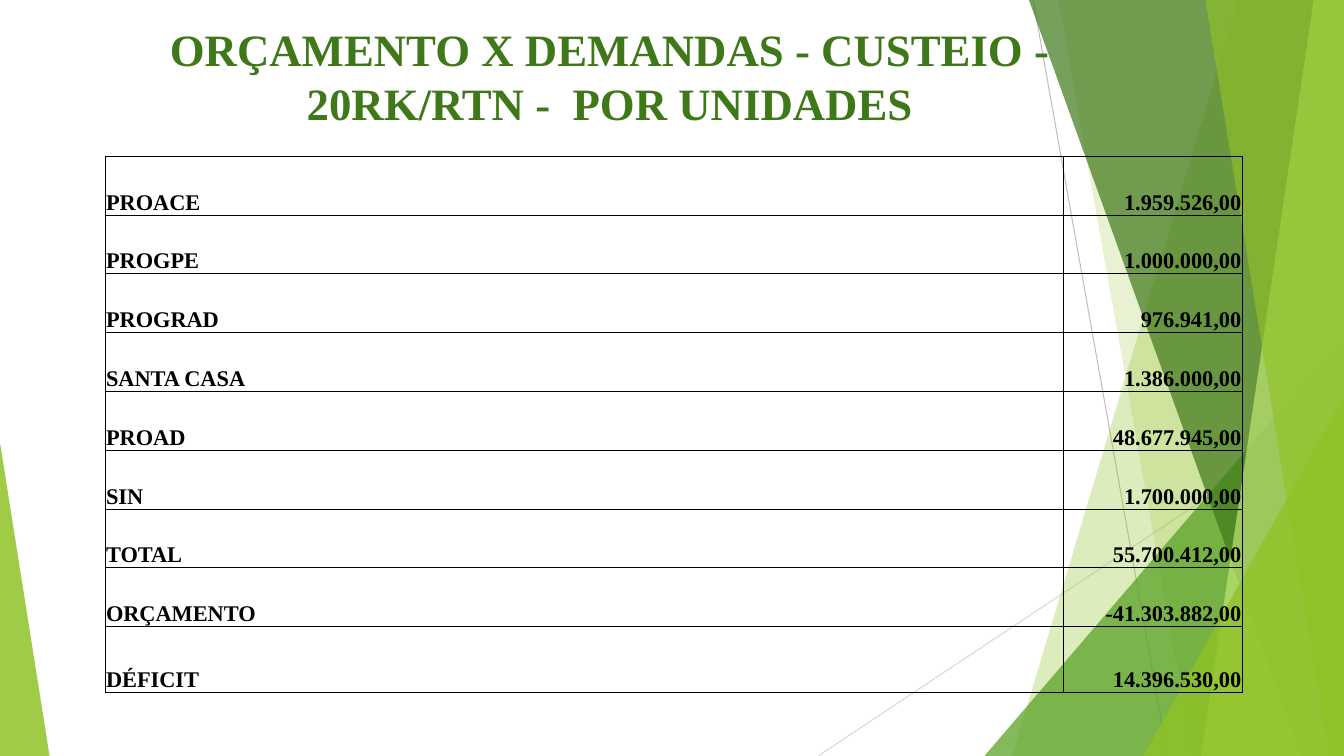
from dataclasses import dataclass
from typing import Any

from lxml.etree import SubElement
from pptx import Presentation
from pptx.dml.color import RGBColor
from pptx.enum.shapes import MSO_CONNECTOR, MSO_SHAPE
from pptx.enum.text import MSO_ANCHOR, PP_ALIGN
from pptx.oxml import parse_xml
from pptx.oxml.ns import nsdecls, qn
from pptx.util import Emu, Pt

COLS, ROWS = 160, 90
CELL = 76200

LIME = RGBColor(0x90, 0xC2, 0x26)
LEAF = RGBColor(0x54, 0xA0, 0x21)
PINE = RGBColor(0x3F, 0x78, 0x19)
PALE = RGBColor(0xC0, 0xE4, 0x74)
GREY = RGBColor(0xBF, 0xBF, 0xBF)
MIST = RGBColor(0xD9, 0xD9, 0xD9)
BLACK = RGBColor(0, 0, 0)

FACE = {"name": "Times New Roman", "bold": True}
TITLE = FACE | {"size": Pt(32)}
BODY = FACE | {"size": Pt(16)}
INSET = {
    "margin_left": Emu(9525),
    "margin_right": Emu(9525),
    "margin_top": Emu(9525),
    "margin_bottom": Emu(0),
    "vertical_anchor": MSO_ANCHOR.BOTTOM,
}
PLAIN = {"first_row": False, "horz_banding": False}


@dataclass
class Ray:
    start: tuple[float, float]
    end: tuple[float, float]
    color: RGBColor


@dataclass
class Band:
    top: float
    base: float
    color: RGBColor
    alpha: int


@dataclass
class Peak:
    left: float
    top: float
    width: float
    apex: float
    color: RGBColor
    alpha: int


RAYS = [
    Ray((123, 0), (139, ROWS), GREY),
    Ray((COLS, 48.4), (97.4, ROWS), MIST),
]
FACETS = [
    Band(147.4, 120.5, LIME, 30),
    Band(126, 142, LIME, 20),
    Peak(117.2, 40, 42.8, 1, LEAF, 72),
    Band(122.5, 154.9, PINE, 70),
    Band(156.4, 143, PALE, 70),
    Band(143.5, 158.2, LIME, 65),
    Peak(136.1, 47.2, 23.9, 1, LIME, 80),
    Peak(0, 52.7, 5.9, 0, LIME, 85),
]
UNITS = [
    ("PROACE", "1.959.526,00"),
    ("PROGPE", "1.000.000,00"),
    ("PROGRAD", "976.941,00"),
    ("SANTA CASA", "1.386.000,00"),
    ("PROAD", "48.677.945,00"),
    ("SIN", "1.700.000,00"),
    ("TOTAL", "55.700.412,00"),
    ("ORÇAMENTO", "-41.303.882,00"),
    ("DÉFICIT", "14.396.530,00"),
]
WIDTHS = (114.1, 21.3)
SIDES = (PP_ALIGN.LEFT, PP_ALIGN.RIGHT)
STEP, LAST = 7, 7.8


def grid(*cells: float) -> list[Emu]:
    return [Emu(round(n * CELL)) for n in cells]


def apply(item: Any, values: dict[str, Any]) -> None:
    for name, value in values.items():
        setattr(item, name, value)


def write(par: Any, text: str, font: dict[str, Any], color: RGBColor, side: Any) -> None:
    par.alignment = side
    run = par.add_run()
    run.text = text
    apply(run.font, font)
    run.font.color.rgb = color


def draw_ray(shapes: Any, ray: Ray) -> None:
    line = shapes.add_connector(MSO_CONNECTOR.STRAIGHT, *grid(*ray.start, *ray.end))
    line.line.color.rgb = ray.color
    line.line.width = Pt(0.75)
    SubElement(line.element.spPr, qn("a:effectLst"))


def draw_facet(shapes: Any, facet: Band | Peak) -> None:
    if isinstance(facet, Band):
        path = shapes.build_freeform(*grid(facet.top, 0))
        path.add_line_segments(
            [grid(COLS, 0), grid(COLS, ROWS), grid(facet.base, ROWS)], close=True
        )
        shape = path.convert_to_shape()
    else:
        box = grid(facet.left, facet.top, facet.width, ROWS - facet.top)
        shape = shapes.add_shape(MSO_SHAPE.ISOSCELES_TRIANGLE, *box)
        shape.adjustments[0] = facet.apex
    shape.shadow.inherit = False
    shape.line.fill.background()
    shape.fill.solid()
    shape.fill.fore_color.rgb = facet.color
    tint = shape.element.spPr.find(qn("a:solidFill")).find(qn("a:srgbClr"))
    SubElement(tint, qn("a:alpha"), val=str(facet.alpha * 1000))


def draw_title(shapes: Any) -> None:
    frame = shapes.add_textbox(*grid(8.8, 2, 127.6, 12.7)).text_frame
    frame.word_wrap = True
    text = "ORÇAMENTO X DEMANDAS - CUSTEIO - 20RK/RTN -  POR UNIDADES"
    write(frame.paragraphs[0], text, TITLE, PINE, PP_ALIGN.CENTER)


def add_edges(cell: Any) -> None:
    props = cell._tc.get_or_add_tcPr()
    for spot, side in enumerate("LRTB"):
        props.insert(spot, parse_xml(
            f'<a:ln{side} {nsdecls("a")} w="6350"><a:solidFill>'
            f'<a:srgbClr val="{BLACK}"/></a:solidFill></a:ln{side}>'
        ))


def draw_table(shapes: Any) -> None:
    count = len(UNITS)
    high = STEP * (count - 1) + LAST
    box = grid(12.5, 18.6, sum(WIDTHS), high)
    table = shapes.add_table(count, len(WIDTHS), *box).table
    apply(table, PLAIN)
    for col, width in zip(table.columns, grid(*WIDTHS)):
        col.width = width
    for row, height in zip(table.rows, grid(*[STEP] * (count - 1), LAST)):
        row.height = height
    for row, unit in zip(table.rows, UNITS):
        for cell, text, side in zip(row.cells, unit, SIDES):
            apply(cell, INSET)
            cell.fill.background()
            add_edges(cell)
            write(cell.text_frame.paragraphs[0], text, BODY, BLACK, side)


def main() -> None:
    deck = Presentation()
    deck.slide_width, deck.slide_height = grid(COLS, ROWS)
    shapes = deck.slides.add_slide(deck.slide_layouts[6]).shapes
    for ray in RAYS:
        draw_ray(shapes, ray)
    for facet in FACETS:
        draw_facet(shapes, facet)
    draw_title(shapes)
    draw_table(shapes)
    deck.save("out.pptx")


if __name__ == "__main__":
    main()
